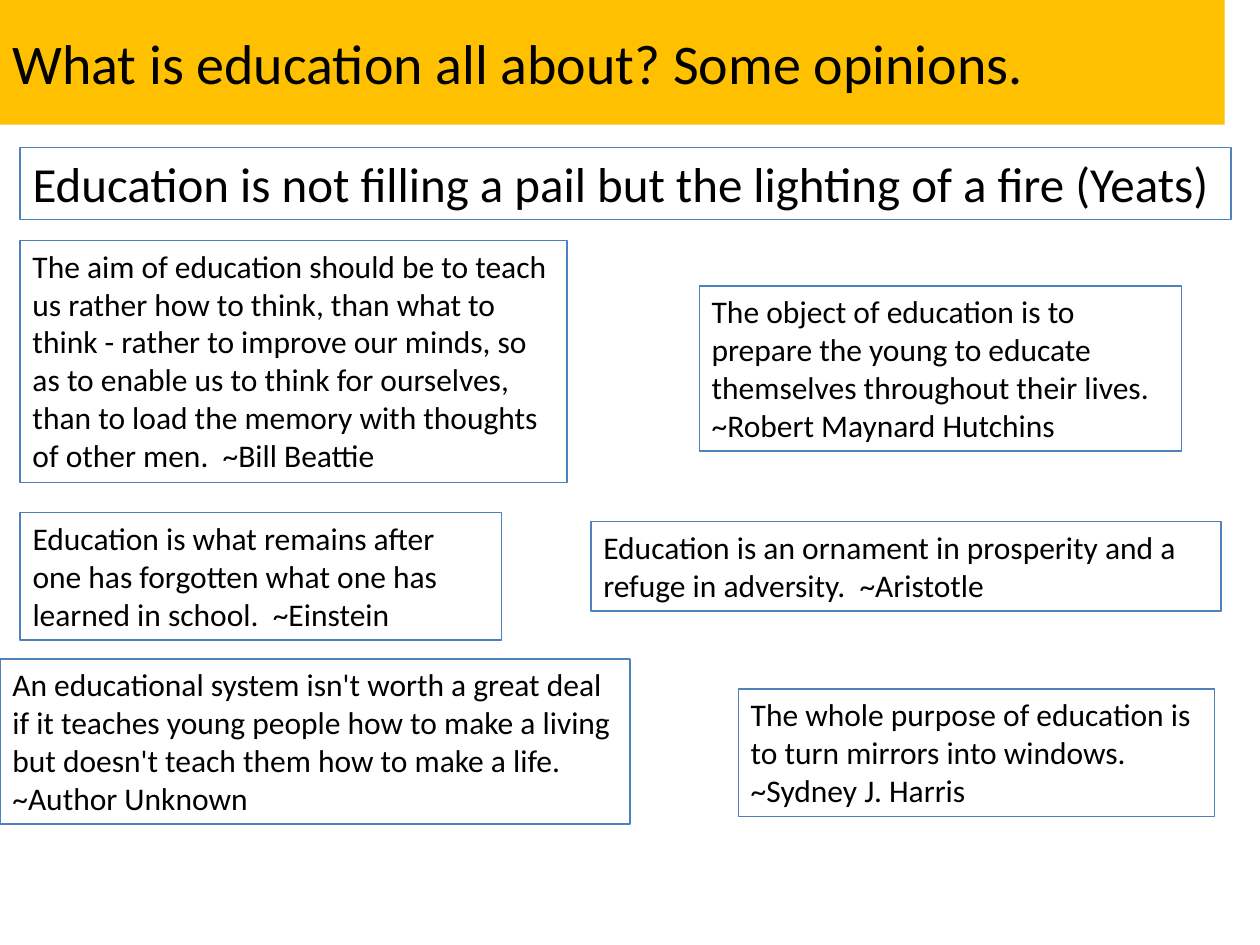
"""Build a slide of opinions on what education is about."""
from pptx import Presentation
from pptx.dml.color import RGBColor
from pptx.enum.text import MSO_ANCHOR, MSO_AUTO_SIZE, PP_ALIGN
from pptx.util import Inches, Pt

MIDDLE, TOP = MSO_ANCHOR.MIDDLE, MSO_ANCHOR.TOP
FIT_SHAPE, NO_FIT = MSO_AUTO_SIZE.SHAPE_TO_FIT_TEXT, MSO_AUTO_SIZE.NONE
LEFT = PP_ALIGN.LEFT

TITLE = ("What is education all about? Some opinions.", (0, 0, 97.2, 13.2))
QUOTES = [
    ("The aim of education should be to teach us rather how to think, than what to "
     "think - rather to improve our minds, so as to enable us to think for ourselves, "
     "than to load the memory with thoughts of other men.  ~Bill Beattie",
     (1.6, 25.47, 43.4, 25.6)),
    ("An educational system isn't worth a great deal if it teaches young people how to "
     "make a living but doesn't teach them how to make a life.  ~Author Unknown",
     (0, 69.73, 50, 17.47)),
    ("Education is what remains after one has forgotten what one has learned in "
     "school.  ~Einstein", (1.6, 54.27, 38.2, 13.47)),
    ("The object of education is to prepare the young to educate themselves throughout "
     "their lives. ~Robert Maynard Hutchins", (55.5, 30.27, 38.3, 17.47)),
    ("The whole purpose of education is to turn mirrors into windows.  ~Sydney J. Harris",
     (58.6, 72.93, 37.8, 13.47)),
    ("Education is an ornament in prosperity and a refuge in adversity.  ~Aristotle",
     (46.9, 55.2, 50, 9.47)),
]
MOTTO = ("Education is not filling a pail but the lighting of a fire (Yeats)",
         (1.6, 15.6, 96.1, 7.6))

THEME = {
    "font": "Calibri",
    "text": RGBColor.from_string("000000"),
    "banner": RGBColor.from_string("FFC000"),
    "border": RGBColor.from_string("4F81BD"),
    "border_width": Pt(0.75),
    "title_size": Pt(32),
    "motto_size": Pt(28),
    "quote_size": Pt(18),
}


def apply(target, values):
    """Set every attribute named in values on target."""
    for name, value in values.items():
        setattr(target, name, value)


def add_text(deck, page, text, shares, size, anchor=TOP, fit=FIT_SHAPE):
    """Add a text box placed by percentages of the slide's size."""
    extents = (deck.slide_width, deck.slide_height) * 2
    place = [round(extent * share / 100) for extent, share in zip(extents, shares)]
    box = page.shapes.add_textbox(*place)
    apply(box.text_frame, {"word_wrap": True, "auto_size": fit, "vertical_anchor": anchor})
    para = box.text_frame.paragraphs[0]
    para.alignment = LEFT
    span = para.add_run()
    span.text = text
    apply(span.font, {"name": THEME["font"], "size": size})
    span.font.color.rgb = THEME["text"]
    return box


def add_framed(deck, page, text, shares, size):
    """Add a text box with a thin border."""
    box = add_text(deck, page, text, shares, size)
    box.line.color.rgb = THEME["border"]
    box.line.width = THEME["border_width"]


def main():
    """Lay out the banner, the quotes and the motto."""
    deck = Presentation()
    apply(deck, {"slide_width": Inches(10), "slide_height": Inches(7.5)})
    page = deck.slides.add_slide(deck.slide_layouts[6])
    banner = add_text(deck, page, *TITLE, THEME["title_size"], MIDDLE, NO_FIT)
    banner.fill.solid()
    banner.fill.fore_color.rgb = THEME["banner"]
    for text, shares in QUOTES:
        add_framed(deck, page, text, shares, THEME["quote_size"])
    add_framed(deck, page, *MOTTO, THEME["motto_size"])
    deck.save("out.pptx")


if __name__ == "__main__":
    main()
